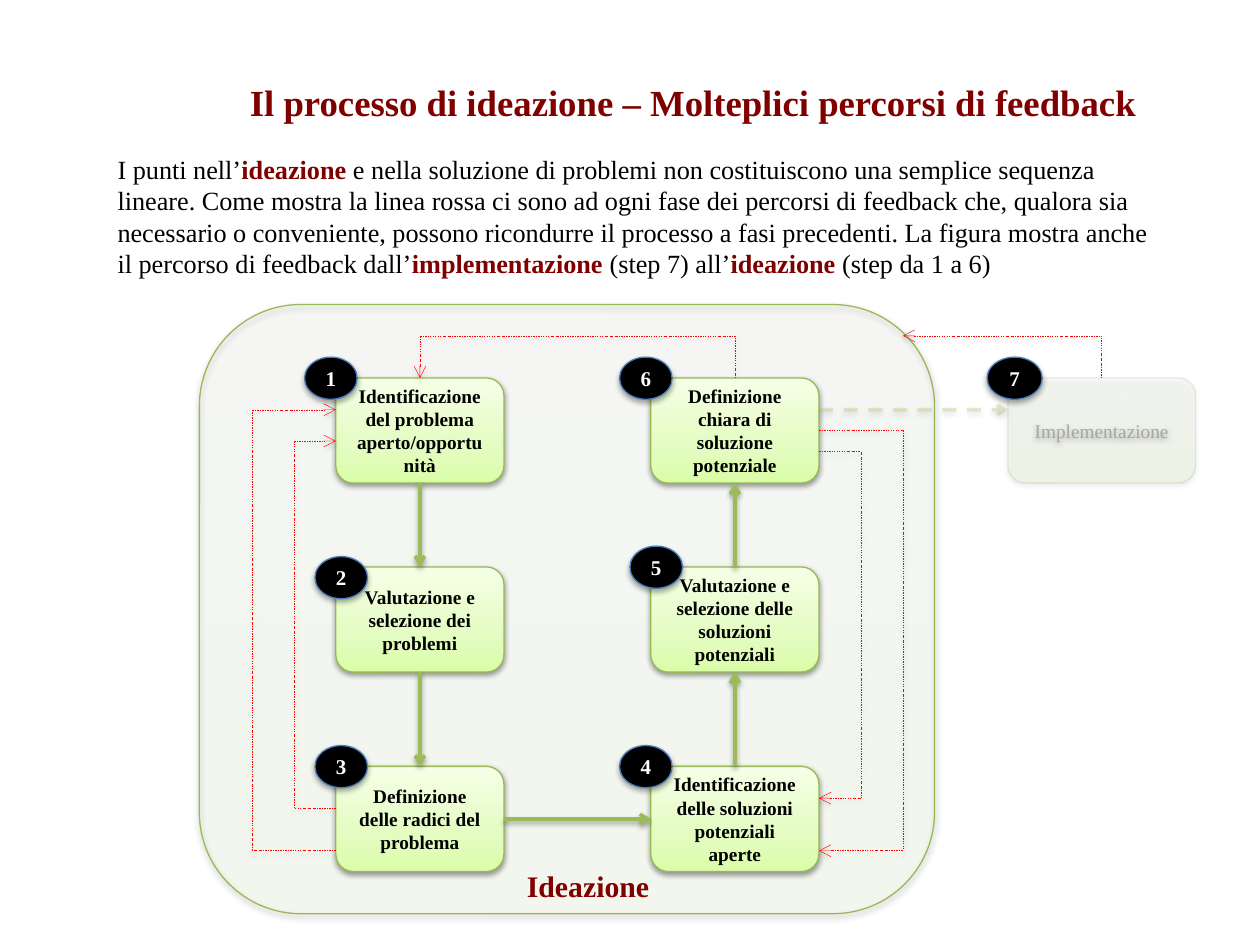
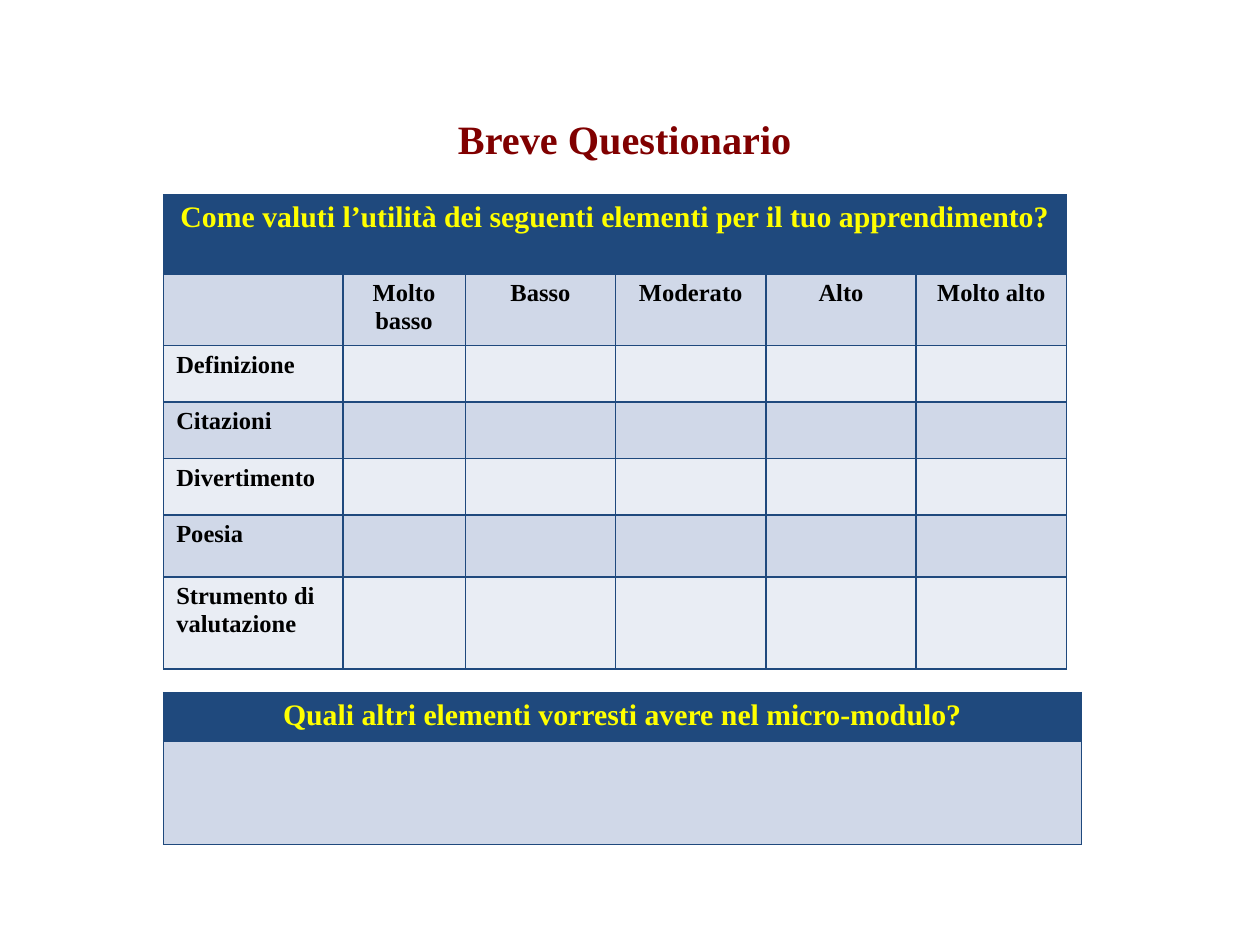
from dataclasses import dataclass
from typing import NamedTuple

from lxml import etree
from pptx import Presentation
from pptx.dml.color import RGBColor
from pptx.enum.dml import MSO_LINE
from pptx.enum.shapes import MSO_CONNECTOR, MSO_SHAPE
from pptx.enum.text import MSO_ANCHOR, PP_ALIGN
from pptx.oxml.ns import qn
from pptx.util import Cm, Pt

ROUNDED, ELLIPSE = MSO_SHAPE.ROUNDED_RECTANGLE, MSO_SHAPE.OVAL
STRAIGHT, ELBOW = MSO_CONNECTOR.STRAIGHT, MSO_CONNECTOR.ELBOW
LEFT, CENTER = PP_ALIGN.LEFT, PP_ALIGN.CENTER
MIDDLE = MSO_ANCHOR.MIDDLE
DASH, DASH_DOT = MSO_LINE.DASH, MSO_LINE.DASH_DOT
TOP_SIDE, LEFT_SIDE, BOTTOM_SIDE, RIGHT_SIDE = range(4)


@dataclass(frozen=True)
class Theme:
    font: str = "Times New Roman"
    maroon: str = "800000"
    black: str = "000000"
    white: str = "FFFFFF"
    faded: str = "A6A6A6"
    yellow: str = "FFFF00"
    navy: str = "1F497D"
    bands: tuple = ("D0D8E8", "E9EDF4")
    gradient: tuple = ((0, "DAFDA7"), (35, "E4FCC2"), (100, "F5FFE7"))
    box_edge: str = "98B955"
    gray_edge: str = "808080"
    flow: str = "9BBB59"
    feedback: str = "FF0000"
    badge_edge: str = "4B7EBC"
    title: float = 21
    subtitle: float = 23
    heading: float = 17
    body: float = 15
    cell: float = 14
    badge: float = 12
    step: float = 11


THEME = Theme()


class Frame(NamedTuple):
    left: float
    top: float
    width: float
    height: float


class Span(NamedTuple):
    text: str
    size: float
    color: str = THEME.black
    bold: bool = True


class Stroke(NamedTuple):
    color: str
    width: float
    dash: MSO_LINE | None = None
    opacity: int = 100


class Step(NamedTuple):
    label: str
    left: float
    top: float
    badge_left: float
    badge_top: float


class Loop(NamedTuple):
    """Feedback path leaving and re-entering the same side of a column."""
    side: float
    lane: float
    start: float
    end: float


FLOW = Stroke(THEME.flow, 2)
FADED_FLOW = Stroke(THEME.flow, 2, DASH, 28)
FEEDBACK = Stroke(THEME.feedback, 0.25, DASH_DOT)
BOX_EDGE = Stroke(THEME.box_edge, 0.75)
FADED_EDGE = Stroke(THEME.gray_edge, 0.75, None, 15)
BADGE_EDGE = Stroke(THEME.badge_edge, 0.75)

STEP_WIDTH, STEP_HEIGHT = 3.39, 2.12
LEFT_COLUMN, RIGHT_COLUMN = 6.77, 13.12
TOP_ROW, MIDDLE_ROW, BOTTOM_ROW = 7.62, 11.43, 15.45
RIGHT_EDGE = RIGHT_COLUMN + STEP_WIDTH
FEEDBACK_TOP = 6.77

STEPS = (
    Step("Identificazione del problema aperto/opportunità", LEFT_COLUMN, TOP_ROW, 6.14, 7.2),
    Step("Valutazione e selezione dei problemi", LEFT_COLUMN, MIDDLE_ROW, 6.35, 11.22),
    Step("Definizione delle radici del problema", LEFT_COLUMN, BOTTOM_ROW, 6.35, 15.03),
    Step("Identificazione delle soluzioni potenziali aperte", RIGHT_COLUMN, BOTTOM_ROW, 12.49, 15.03),
    Step("Valutazione e selezione delle soluzioni potenziali", RIGHT_COLUMN, MIDDLE_ROW, 12.7, 11.01),
    Step("Definizione chiara di soluzione potenziale", RIGHT_COLUMN, TOP_ROW, 12.49, 7.2),
)
FLOW_SIDES = (
    (BOTTOM_SIDE, TOP_SIDE),
    (BOTTOM_SIDE, TOP_SIDE),
    (RIGHT_SIDE, LEFT_SIDE),
    (TOP_SIDE, BOTTOM_SIDE),
    (TOP_SIDE, BOTTOM_SIDE),
)
LOOPS = (
    Loop(LEFT_COLUMN, 5.08, 17.15, 8.26),
    Loop(LEFT_COLUMN, 5.93, 16.3, 8.89),
    Loop(RIGHT_EDGE, 18.2, 8.68, 17.15),
    Loop(RIGHT_EDGE, 17.36, 9.1, 16.09),
)
IMPLEMENTATION = Frame(20.32, TOP_ROW, 3.78, STEP_HEIGHT)

INTRO = (
    ("I punti nell’", False),
    ("ideazione ", True),
    ("e nella soluzione di problemi non costituiscono una semplice sequenza lineare. "
     "Come mostra la linea rossa ci sono ad ogni fase dei percorsi di feedback che, "
     "qualora sia necessario o conveniente, possono ricondurre il processo a fasi "
     "precedenti. La figura mostra anche il percorso di feedback dall’", False),
    ("implementazione ", True),
    ("(step 7) all’", False),
    ("ideazione ", True),
    ("(step da 1 a 6)", False),
)

RATINGS = ("", "Molto basso", "Basso", "Moderato", "Alto", "Molto alto")
ELEMENTS = ("Definizione", "Citazioni", "Divertimento", "Poesia", "Strumento di valutazione")


def lengths(frame: Frame) -> list:
    return [Cm(value) for value in frame]


def write(text_frame, spans, align=LEFT) -> None:
    para = text_frame.paragraphs[0]
    para.alignment = align
    for span in spans:
        run = para.add_run()
        run.text = span.text
        font_format = {"name": THEME.font, "size": Pt(span.size), "bold": span.bold}
        for name, value in font_format.items():
            setattr(run.font, name, value)
        run.font.color.rgb = RGBColor.from_string(span.color)


def add_text(page, frame: Frame, spans, align=LEFT, wrap=True) -> None:
    box = page.shapes.add_textbox(*lengths(frame))
    box.text_frame.word_wrap = wrap
    write(box.text_frame, spans, align)


def add_color(parent, color: str, opacity: int = 100) -> None:
    node = etree.SubElement(parent, qn("a:srgbClr"), val=color)
    if opacity < 100:
        etree.SubElement(node, qn("a:alpha"), val=str(opacity * 1000))


def add_shadow(item, opacity: int = 38, distance: int = 20000) -> None:
    properties = item.element.spPr
    effects = properties.find(qn("a:effectLst"))
    if effects is None:
        effects = etree.SubElement(properties, qn("a:effectLst"))
    shadow = etree.SubElement(effects, qn("a:outerShdw"), blurRad="40000",
                              dist=str(distance), dir="5400000", rotWithShape="0")
    add_color(shadow, THEME.black, opacity)


def apply_stroke(line, stroke: Stroke) -> None:
    line.color.rgb = RGBColor.from_string(stroke.color)
    line.width = Pt(stroke.width)
    if stroke.dash:
        line.dash_style = stroke.dash
    if stroke.opacity < 100:
        color = line._ln.find(qn("a:solidFill")).find(qn("a:srgbClr"))
        etree.SubElement(color, qn("a:alpha"), val=str(stroke.opacity * 1000))


def apply_gradient(shape, opacity: int) -> None:
    shape.fill.gradient()
    shape.fill.gradient_angle = 90
    stops = shape.element.spPr.find(qn("a:gradFill")).find(qn("a:gsLst"))
    for stop in list(stops):
        stops.remove(stop)
    for position, color in THEME.gradient:
        add_color(etree.SubElement(stops, qn("a:gs"), pos=str(position * 1000)), color, opacity)


def add_panel(page, frame: Frame, span: Span | None = None, edge=BOX_EDGE, opacity=100):
    panel = page.shapes.add_shape(ROUNDED, *lengths(frame))
    panel.shadow.inherit = False
    apply_gradient(panel, opacity)
    apply_stroke(panel.line, edge)
    add_shadow(panel)
    if span:
        panel.text_frame.vertical_anchor = MIDDLE
        write(panel.text_frame, [span], CENTER)
    return panel


def add_badge(page, number: int, left: float, top: float, width: float = 1.06) -> None:
    badge = page.shapes.add_shape(ELLIPSE, *lengths(Frame(left, top, width, 0.85)))
    badge.shadow.inherit = False
    badge.fill.solid()
    badge.fill.fore_color.rgb = RGBColor.from_string(THEME.black)
    apply_stroke(badge.line, BADGE_EDGE)
    add_shadow(badge, 35, 23000)
    badge.text_frame.vertical_anchor = MIDDLE
    write(badge.text_frame, [Span(str(number), THEME.badge, THEME.white)], CENTER)


def add_line(page, start, end, stroke: Stroke, kind=STRAIGHT, arrow: str | None = "tailEnd"):
    """Draw a line; an elbow runs sideways first and then up or down."""
    line = page.shapes.add_connector(kind, *(Cm(value) for value in (*start, *end)))
    if kind == ELBOW:
        line.element.spPr.find(qn("a:prstGeom")).set("prst", "bentConnector2")
    apply_stroke(line.line, stroke)
    if arrow:
        etree.SubElement(line.line._ln, qn(f"a:{arrow}"), type="arrow")
    add_shadow(line)
    return line


def add_feedback(page, first_step) -> None:
    for loop in LOOPS:
        corner = (loop.lane, loop.end)
        add_line(page, (loop.side, loop.start), corner, FEEDBACK, ELBOW, None)
        add_line(page, corner, (loop.side, loop.end), FEEDBACK)
    left_middle, right_middle = (x + STEP_WIDTH / 2 for x in (LEFT_COLUMN, RIGHT_COLUMN))
    corner = (left_middle, FEEDBACK_TOP)
    add_line(page, corner, (right_middle, TOP_ROW), FEEDBACK, ELBOW, None)
    add_line(page, corner, (left_middle, TOP_ROW), FEEDBACK).end_connect(first_step, TOP_SIDE)
    implementation_middle = IMPLEMENTATION.left + IMPLEMENTATION.width / 2
    add_line(page, (18.2, FEEDBACK_TOP), (implementation_middle, TOP_ROW),
             FEEDBACK, ELBOW, "headEnd")


def build_process(page) -> None:
    add_panel(page, Frame(4.02, 6.14, 14.82, 12.28), opacity=10)
    boxes = [add_panel(page, Frame(step.left, step.top, STEP_WIDTH, STEP_HEIGHT),
                       Span(step.label, THEME.step)) for step in STEPS]
    add_panel(page, IMPLEMENTATION, Span("Implementazione", THEME.step, THEME.faded, False),
              FADED_EDGE, 16)
    for source, target, (leave, enter) in zip(boxes, boxes[1:], FLOW_SIDES):
        arrow = add_line(page, (0, 0), (1, 1), FLOW)
        arrow.begin_connect(source, leave)
        arrow.end_connect(target, enter)
    add_feedback(page, boxes[0])
    add_line(page, (RIGHT_EDGE, 8.26), (IMPLEMENTATION.left, 8.26), FADED_FLOW)
    for number, step in enumerate(STEPS, 1):
        add_badge(page, number, step.badge_left, step.badge_top)
    add_badge(page, len(STEPS) + 1, 19.9, 7.2, 1.11)
    add_text(page, Frame(3.39, 1.48, 21.17, 1.15),
             [Span("Il processo di ideazione – Molteplici percorsi di feedback",
                   THEME.title, THEME.maroon)], CENTER)
    add_text(page, Frame(2.12, 2.96, 21.59, 2.82),
             [Span(text, THEME.body, THEME.maroon if key else THEME.black, key)
              for text, key in INTRO])
    add_text(page, Frame(10.37, 17.36, 3, 0.99),
             [Span("Ideazione", THEME.heading, THEME.maroon)], wrap=False)


def style_cell(cell, fill: str) -> None:
    cell.fill.solid()
    cell.fill.fore_color.rgb = RGBColor.from_string(fill)
    properties = cell._tc.get_or_add_tcPr()
    for index, side in enumerate(("lnL", "lnR", "lnT", "lnB")):
        border = etree.Element(qn(f"a:{side}"), w=str(Pt(1)))
        add_color(etree.SubElement(border, qn("a:solidFill")), THEME.navy)
        properties.insert(index, border)


def add_form(page, left: float, top: float, widths, heights, question: str, rows) -> None:
    """Draw a table with one question across its top and banded rows below."""
    frame = Frame(left, top, sum(widths), sum(heights))
    table = page.shapes.add_table(len(heights), len(widths), *lengths(frame)).table
    for column, width in zip(table.columns, widths):
        column.width = Cm(width)
    for row, height in zip(table.rows, heights):
        row.height = Cm(height)
    for cell in table.rows[0].cells:
        style_cell(cell, THEME.navy)
    header = table.cell(0, 0)
    if len(widths) > 1:
        header.merge(table.cell(0, len(widths) - 1))
    write(header.text_frame, [Span(question, THEME.heading, THEME.yellow)], CENTER)
    for row_index, labels in enumerate(rows, 1):
        for column_index, label in enumerate(labels):
            cell = table.cell(row_index, column_index)
            style_cell(cell, THEME.bands[(row_index - 1) % 2])
            if label:
                write(cell.text_frame, [Span(label, THEME.cell)],
                      CENTER if column_index else LEFT)


def build_questionnaire(page) -> None:
    add_text(page, Frame(5.93, 2.18, 13.34, 1.6),
             [Span("Breve Questionario", THEME.subtitle, THEME.maroon)], CENTER)
    blanks = ("",) * (len(RATINGS) - 1)
    add_form(page, 3.3, 3.93, (3.61, 2.47, *(3.03,) * 4),
             (1.59, 1.35, *(1.14,) * 3, 1.25, 1.86),
             "Come valuti l’utilità dei seguenti elementi per il tuo apprendimento?",
             (RATINGS, *((element, *blanks) for element in ELEMENTS)))
    add_form(page, 3.3, 13.96, (18.5,), (0.98, 2.08),
             "Quali altri elementi vorresti avere nel micro-modulo?", (("",),))


def main() -> None:
    deck = Presentation()
    deck.slide_width, deck.slide_height = Cm(25.4), Cm(19.05)
    for build in (build_process, build_questionnaire):
        build(deck.slides.add_slide(deck.slide_layouts[6]))
    deck.save("out.pptx")


if __name__ == "__main__":
    main()
